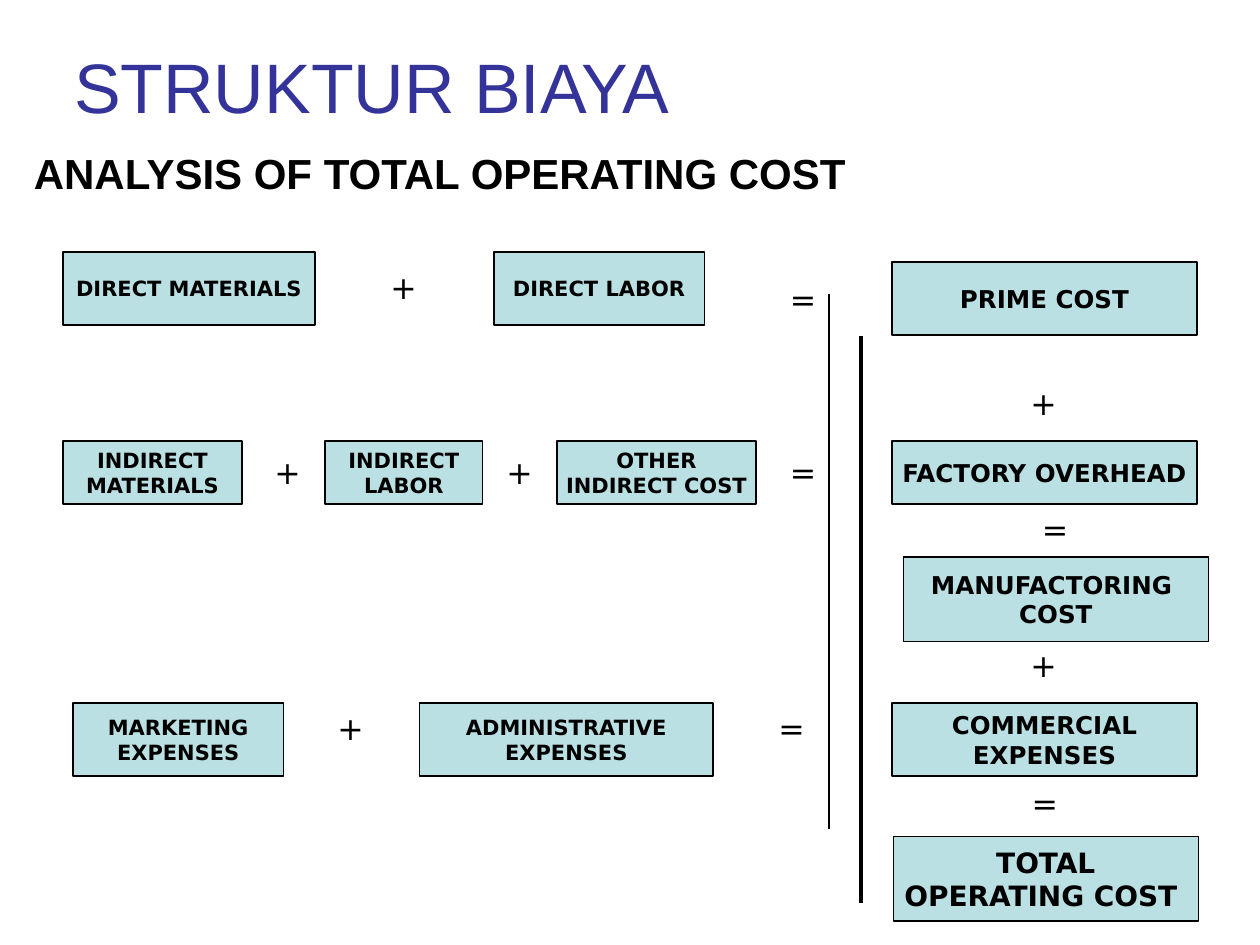
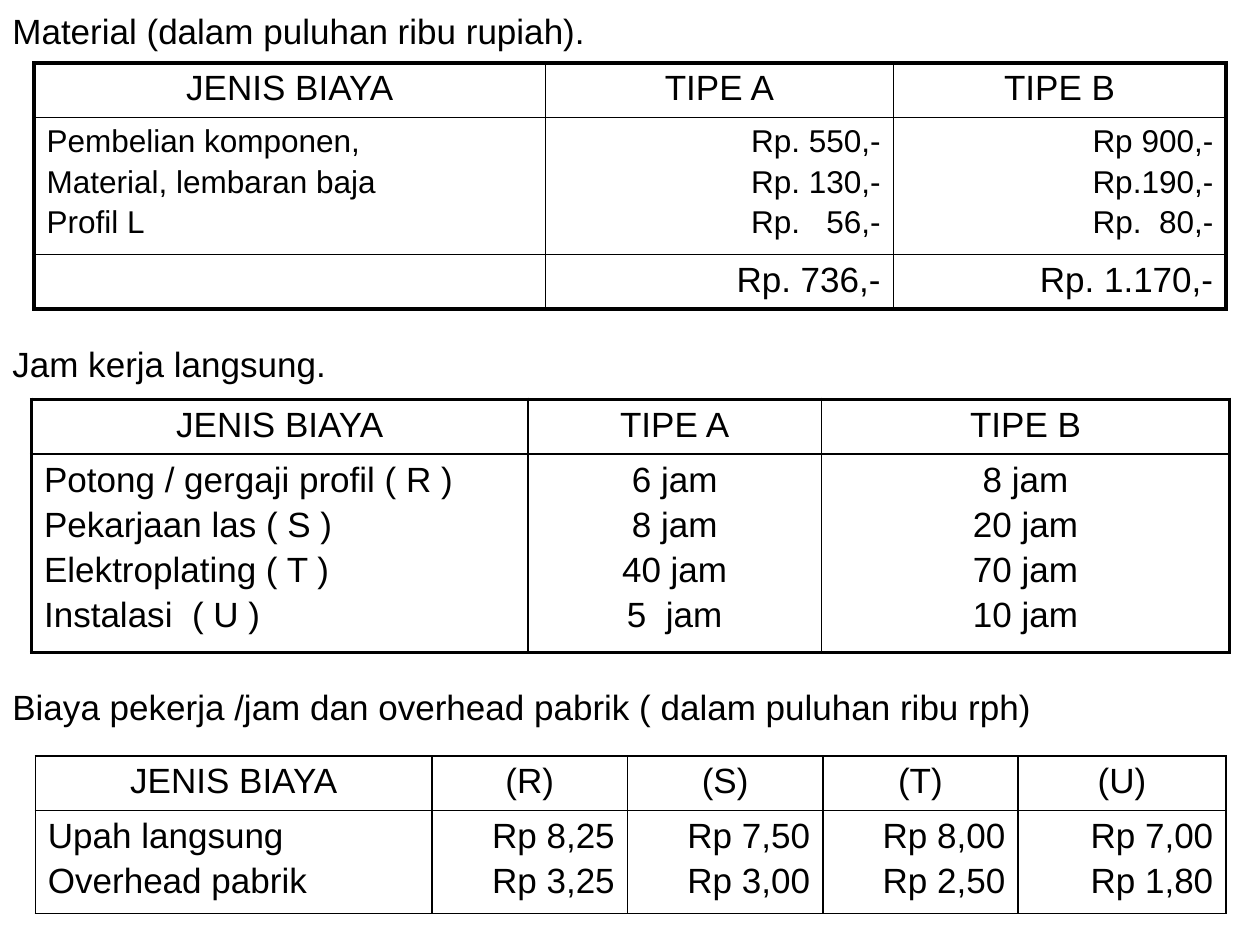
from lxml import etree
from pptx import Presentation
from pptx.dml.color import RGBColor
from pptx.enum.shapes import MSO_CONNECTOR, MSO_SHAPE
from pptx.enum.text import MSO_ANCHOR, PP_ALIGN
from pptx.oxml.ns import qn
from pptx.util import Inches, Pt

LEFT, MID, RIGHT = PP_ALIGN.LEFT, PP_ALIGN.CENTER, PP_ALIGN.RIGHT
TOP, CENTER, BOTTOM = MSO_ANCHOR.TOP, MSO_ANCHOR.MIDDLE, MSO_ANCHOR.BOTTOM
RECT, LINE = MSO_SHAPE.RECTANGLE, MSO_CONNECTOR.STRAIGHT
COLORS = {"ink": "000000", "title": "333399", "box": "BBE0E3"}
SANS, BOLD_SANS = "Arial", "DejaVu Sans"
THIN, THICK = 1, 2.25


def color(name):
    """Return the named colour."""
    return RGBColor.from_string(COLORS[name])


def write(frame, text, size, font=SANS, ink="ink", bold=False, align=LEFT, gap=0):
    """Write each line of text as a paragraph with one run."""
    for i, line in enumerate(text.split("\n")):
        para = frame.add_paragraph() if i else frame.paragraphs[0]
        para.alignment = align
        if i and gap:
            para.space_before = Pt(gap)
        run = para.add_run()
        run.text = line
        run.font.size = Pt(size)
        run.font.name = font
        run.font.bold = bold
        run.font.color.rgb = color(ink)


def label(slide, box, text, size, anchor=TOP, **style):
    """Add a plain text box."""
    frame = slide.shapes.add_textbox(*map(Inches, box)).text_frame
    frame.word_wrap = True
    frame.vertical_anchor = anchor
    write(frame, text, size, **style)


def cost(slide, box, text, size):
    """Add a filled cost box."""
    shape = slide.shapes.add_shape(RECT, *map(Inches, box))
    shape.shadow.inherit = False
    shape.fill.solid()
    shape.fill.fore_color.rgb = color("box")
    shape.line.color.rgb = color("ink")
    shape.line.width = Pt(0.75)
    frame = shape.text_frame
    frame.word_wrap = False
    frame.vertical_anchor = CENTER
    write(frame, text, size, BOLD_SANS, bold=True, align=MID)


def sign(slide, left, top, text):
    """Add a plus or equals sign."""
    label(slide, (left, top, 0.5, 0.4), text, 18, font=BOLD_SANS)


def bar(slide, left, top, bottom, width):
    """Add an upright line."""
    line = slide.shapes.add_connector(
        LINE, Inches(left), Inches(top), Inches(left), Inches(bottom))
    line.line.color.rgb = color("ink")
    line.line.width = Pt(width)
    etree.SubElement(line._element.spPr, qn("a:effectLst"))


def sum_row(slide, top, height, parts, signs, sign_top):
    """Add one row of cost parts and the signs between them."""
    for left, width, text in parts:
        cost(slide, (left, top, width, height), text, 12)
    for left, text in signs:
        sign(slide, left, sign_top, text)


def total_col(slide, left, width):
    """Add the column that adds up to the total cost."""
    totals = [
        (0, 2.08, 0.58, "PRIME COST", 14),
        (0, 3.5, 0.5, "FACTORY OVERHEAD", 14),
        (0.09, 4.42, 0.67, "MANUFACTORING \nCOST", 14),
        (0, 5.58, 0.58, "COMMERCIAL\nEXPENSES", 14),
        (0.01, 6.64, 0.67, "TOTAL\nOPERATING COST ", 16),
    ]
    for shift, top, height, text, size in totals:
        cost(slide, (left + shift, top, width, height), text, size)
    for shift, top, text in [(1, 3, "+"), (1.09, 4, "="), (1, 5.08, "+"), (1.01, 6.17, "=")]:
        sign(slide, left + shift, top, text)


def edge(cell, side, width):
    """Draw one border of a cell."""
    line = etree.SubElement(
        cell._tc.get_or_add_tcPr(), qn("a:ln" + side), w=str(Pt(width)))
    fill = etree.SubElement(line, qn("a:solidFill"))
    etree.SubElement(fill, qn("a:srgbClr"), val=COLORS["ink"])


def grid(slide, left, top, cols, heights, rows, aligns, sizes, rim):
    """Add a ruled table whose rim may be thicker than its inner lines."""
    frame = slide.shapes.add_table(
        len(rows), len(cols), Inches(left), Inches(top),
        Inches(sum(cols)), Inches(sum(heights)))
    table = frame.table
    table.first_row = table.horz_banding = False
    for col, width in zip(table.columns, cols):
        col.width = Inches(width)
    for row, height in zip(table.rows, heights):
        row.height = Inches(height)
    for r, texts in enumerate(rows):
        for c, text in enumerate(texts):
            cell = table.cell(r, c)
            outer = {"L": c == 0, "R": c == len(cols) - 1,
                     "T": r == 0, "B": r == len(rows) - 1}
            for side, rimmed in outer.items():
                edge(cell, side, rim if rimmed else THIN)
            cell.fill.background()
            if text:
                write(cell.text_frame, text, sizes[r], align=aligns[c] if r else MID,
                      gap=0.17 * sizes[r])


def structure(slide):
    """Build the cost structure slide."""
    label(slide, (0.49, 0.17, 9.02, 0.89), "STRUKTUR BIAYA", 40, BOTTOM, ink="title")
    label(slide, (0.17, 1.12, 9.67, 0.5), "ANALYSIS OF TOTAL OPERATING COST", 24, bold=True)
    sum_row(slide, 2, 0.58,
            [(0.5, 2, "DIRECT MATERIALS"), (3.92, 1.67, "DIRECT LABOR")],
            [(3, "+")], 2.08)
    sign(slide, 6.17, 2.17, "=")
    sum_row(slide, 3.5, 0.5,
            [(0.5, 1.42, "INDIRECT\nMATERIALS"), (2.58, 1.25, "INDIRECT\nLABOR"),
             (4.42, 1.58, "OTHER\nINDIRECT COST")],
            [(2.08, "+"), (3.92, "+"), (6.17, "=")], 3.55)
    sum_row(slide, 5.58, 0.58,
            [(0.58, 1.67, "MARKETING\nEXPENSES"), (3.33, 2.33, "ADMINISTRATIVE\nEXPENSES")],
            [(2.58, "+"), (6.08, "=")], 5.58)
    total_col(slide, 7.08, 2.42)
    bar(slide, 6.58, 2.33, 6.58, 1.5)
    bar(slide, 6.83, 2.67, 7.17, 2.25)


def tables(slide):
    """Build the slide with the three cost tables."""
    heads = [
        (0.03, "Material (dalam puluhan ribu rupiah)."),
        (2.67, "Jam kerja langsung."),
        (5.39, "Biaya pekerja /jam dan overhead pabrik ( dalam puluhan ribu rph)"),
    ]
    for top, text in heads:
        label(slide, (0, top, 10, 0.42), text, 20)
    types = ["JENIS BIAYA", "TIPE A", "TIPE B"]
    grid(slide, 0.27, 0.5, [4.06, 2.76, 2.64], [0.41, 1.04, 0.41], [
        types,
        ["Pembelian komponen,\nMaterial, lembaran baja\nProfil L",
         "Rp. 550,-\nRp. 130,-\nRp.   56,-", "Rp 900,-\nRp.190,-\nRp.  80,-"],
        ["", "Rp. 736,-", "Rp. 1.170,-"],
    ], [LEFT, RIGHT, RIGHT], [20, 18, 20], THICK)
    grid(slide, 0.25, 3.17, [3.94, 2.33, 3.24], [0.41, 1.5], [
        types,
        ["Potong / gergaji profil ( R )\nPekarjaan las ( S )\n"
         "Elektroplating ( T )\nInstalasi  ( U )",
         "6 jam\n8 jam\n40 jam\n5  jam", "8 jam\n20 jam\n70 jam\n10 jam"],
    ], [LEFT, MID, MID], [20, 20], THICK)
    grid(slide, 0.28, 6, [3.15] + [1.55] * 3 + [1.65], [0.41, 0.78], [
        ["JENIS BIAYA", "(R)", "(S)", "(T)", "(U)"],
        ["Upah langsung\nOverhead pabrik", "Rp 8,25\nRp 3,25", "Rp 7,50\nRp 3,00",
         "Rp 8,00\nRp 2,50", "Rp 7,00\nRp 1,80"],
    ], [LEFT] + [RIGHT] * 4, [20, 20], THIN)


def main():
    """Build and save the slides."""
    deck = Presentation()
    deck.slide_width, deck.slide_height = Inches(10), Inches(7.5)
    for build in (structure, tables):
        build(deck.slides.add_slide(deck.slide_layouts[6]))
    deck.save("out.pptx")


if __name__ == "__main__":
    main()
